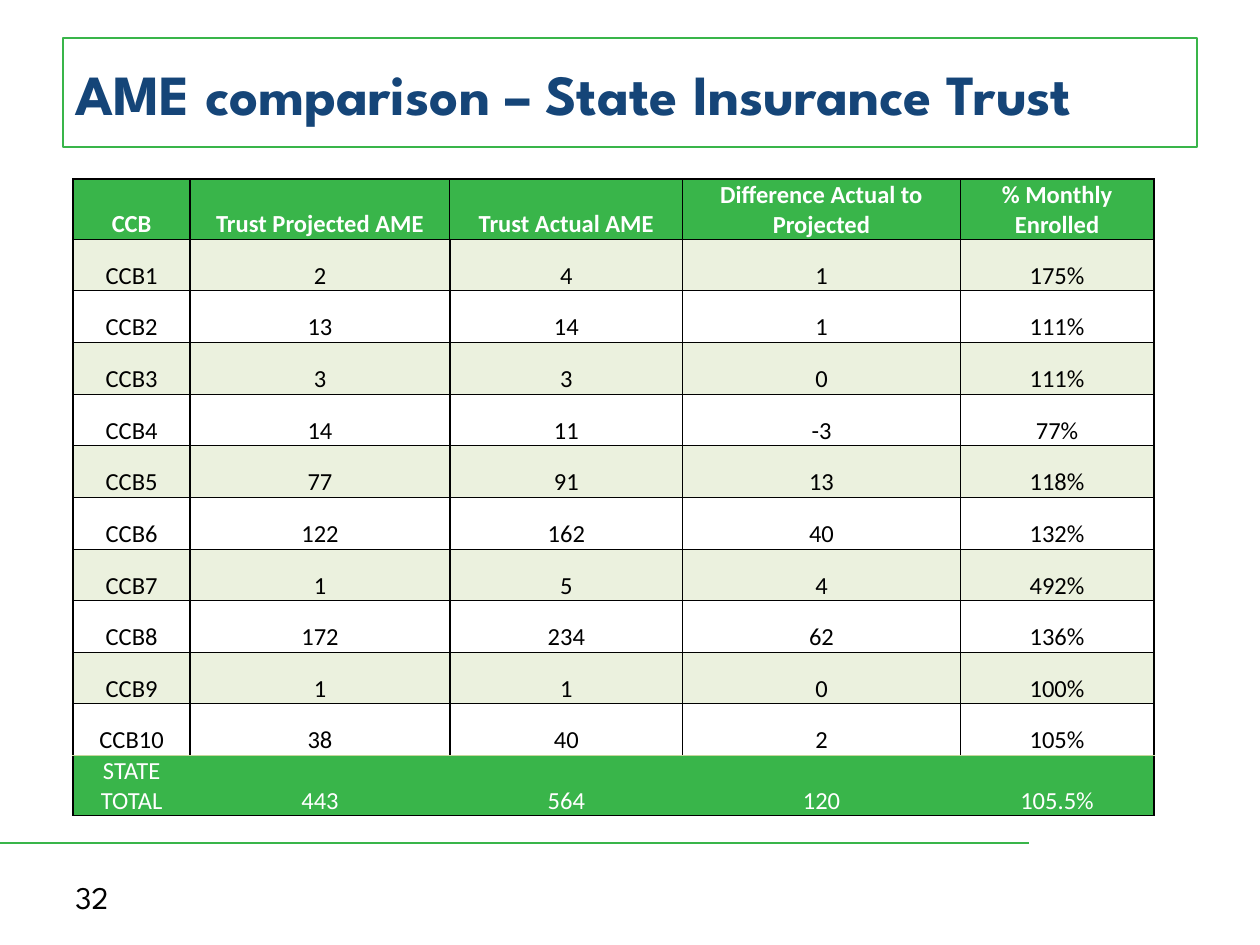
"""Build the AME comparison slide: boxed title, trust table, footer rule and page number."""
import pptx
import pptx.util
import pptx.dml.color
import pptx.enum.shapes
import pptx.enum.text
import pptx.oxml
import pptx.oxml.ns
from lxml import etree

Inches, Pt = pptx.util.Inches, pptx.util.Pt
RGB = pptx.dml.color.RGBColor
ALIGN, ANCHOR = pptx.enum.text.PP_ALIGN, pptx.enum.text.MSO_ANCHOR

GREEN = RGB(0x39, 0xB5, 0x4A)
NAVY = RGB(0x15, 0x45, 0x78)
BAND = RGB(0xEB, 0xF1, 0xDE)
SAGE = RGB(0xC4, 0xD7, 0x9B)
WHITE = RGB(0xFF, 0xFF, 0xFF)
BLACK = RGB(0x00, 0x00, 0x00)

TITLE = "AME comparison – State Insurance Trust"
PAGE = "32"
ROWS = [
    ("CCB", "Trust Projected AME", "Trust Actual AME",
     "Difference Actual to Projected", "% Monthly Enrolled"),
    ("CCB1", "2", "4", "1", "175%"),
    ("CCB2", "13", "14", "1", "111%"),
    ("CCB3", "3", "3", "0", "111%"),
    ("CCB4", "14", "11", "-3", "77%"),
    ("CCB5", "77", "91", "13", "118%"),
    ("CCB6", "122", "162", "40", "132%"),
    ("CCB7", "1", "5", "4", "492%"),
    ("CCB8", "172", "234", "62", "136%"),
    ("CCB9", "1", "1", "0", "100%"),
    ("CCB10", "38", "40", "2", "105%"),
    ("STATE TOTAL", "443", "564", "120", "105.5%"),
]
COL_WIDTHS = [0.93, 2.06, 1.85, 2.2, 1.54]
ROW_HEIGHT = 0.41
LAST_ROW, LAST_COL = len(ROWS) - 1, len(COL_WIDTHS) - 1

TITLE_FONT = {"name": "League Spartan", "size": Pt(32.4), "bold": True}
PAGE_FONT = {"name": "League Spartan", "size": Pt(18), "bold": False}
CELL_FONT = {"name": "Calibri", "size": Pt(14)}
CELL_FORMAT = {
    "vertical_anchor": ANCHOR.BOTTOM, "margin_left": Inches(0.01),
    "margin_right": Inches(0.01), "margin_top": Inches(0.01), "margin_bottom": 0,
}
FRAME_FORMAT = {"word_wrap": True, "vertical_anchor": ANCHOR.MIDDLE}


def apply(obj, values):
    for name, value in values.items():
        setattr(obj, name, value)


def write(tf, text, font, color, align):
    p = tf.paragraphs[0]
    p.alignment = align
    r = p.add_run()
    r.text = text
    apply(r.font, font)
    r.font.color.rgb = color


def row_edge(edge):
    if edge == LAST_ROW:
        return SAGE, 0.5
    return BLACK, 1 if edge in (0, LAST_ROW + 1) else 0.5


def col_edge(row, edge):
    if row == LAST_ROW and 0 < edge <= LAST_COL:
        return None
    heavy = edge in (0, 1, LAST_COL + 1) or (edge == 2 and row > 0)
    return BLACK, 1 if heavy else 0.5


def set_border(cell, side, style):
    ln = etree.SubElement(cell._tc.get_or_add_tcPr(), pptx.oxml.ns.qn("a:ln" + side))
    if style is None:
        etree.SubElement(ln, pptx.oxml.ns.qn("a:noFill"))
        return
    color, width = style
    ln.set("w", str(Pt(width)))
    fill = etree.SubElement(ln, pptx.oxml.ns.qn("a:solidFill"))
    etree.SubElement(fill, pptx.oxml.ns.qn("a:srgbClr"), val=str(color))


def fill_cell(cell, row, col, text):
    accent = row in (0, LAST_ROW)
    apply(cell, CELL_FORMAT)
    write(cell.text_frame, text, {**CELL_FONT, "bold": row == 0},
          WHITE if accent else BLACK, ALIGN.CENTER)
    for side, style in (("L", col_edge(row, col)), ("R", col_edge(row, col + 1)),
                        ("T", row_edge(row)), ("B", row_edge(row + 1))):
        set_border(cell, side, style)
    if accent or row % 2:
        cell.fill.solid()
        cell.fill.fore_color.rgb = GREEN if accent else BAND
    else:
        cell.fill.background()


def add_rule(s):
    line = s.shapes.add_connector(pptx.enum.shapes.MSO_CONNECTOR.STRAIGHT,
                                  0, Inches(6.69), Inches(8.17), Inches(6.69))
    line.line.color.rgb = GREEN
    line.line.width = Pt(1.5)
    etree.SubElement(line._element.spPr, pptx.oxml.ns.qn("a:effectLst"))


def add_page_number(s):
    sp = s.shapes.add_textbox(Inches(0.5), Inches(6.92), Inches(2.33), Inches(0.4))
    apply(sp.text_frame, FRAME_FORMAT)
    write(sp.text_frame, PAGE, PAGE_FONT, BLACK, ALIGN.LEFT)


def add_title(s):
    sp = s.shapes.add_shape(pptx.enum.shapes.MSO_SHAPE.RECTANGLE,
                            Inches(0.5), Inches(0.3), Inches(9), Inches(0.87))
    sp.shadow.inherit = False
    sp.fill.background()
    sp.line.color.rgb = GREEN
    sp.line.width = Pt(1)
    apply(sp.text_frame, FRAME_FORMAT)
    write(sp.text_frame, TITLE, TITLE_FONT, NAVY, ALIGN.LEFT)


def add_trust_table(s):
    table = s.shapes.add_table(
        len(ROWS), len(COL_WIDTHS), Inches(0.58), Inches(1.42),
        Inches(sum(COL_WIDTHS)), Inches(ROW_HEIGHT * len(ROWS))).table
    apply(table, {"first_row": False, "horz_banding": False})
    for column, width in zip(table.columns, COL_WIDTHS):
        column.width = Inches(width)
    for i, values in enumerate(ROWS):
        table.rows[i].height = Inches(ROW_HEIGHT)
        for j, text in enumerate(values):
            fill_cell(table.cell(i, j), i, j, text)


def main():
    prs = pptx.Presentation()
    prs.slide_width, prs.slide_height = Inches(10), Inches(7.5)
    s = prs.slides.add_slide(prs.slide_layouts[6])
    add_rule(s)
    add_page_number(s)
    add_title(s)
    add_trust_table(s)
    prs.save("out.pptx")


if __name__ == "__main__":
    main()
